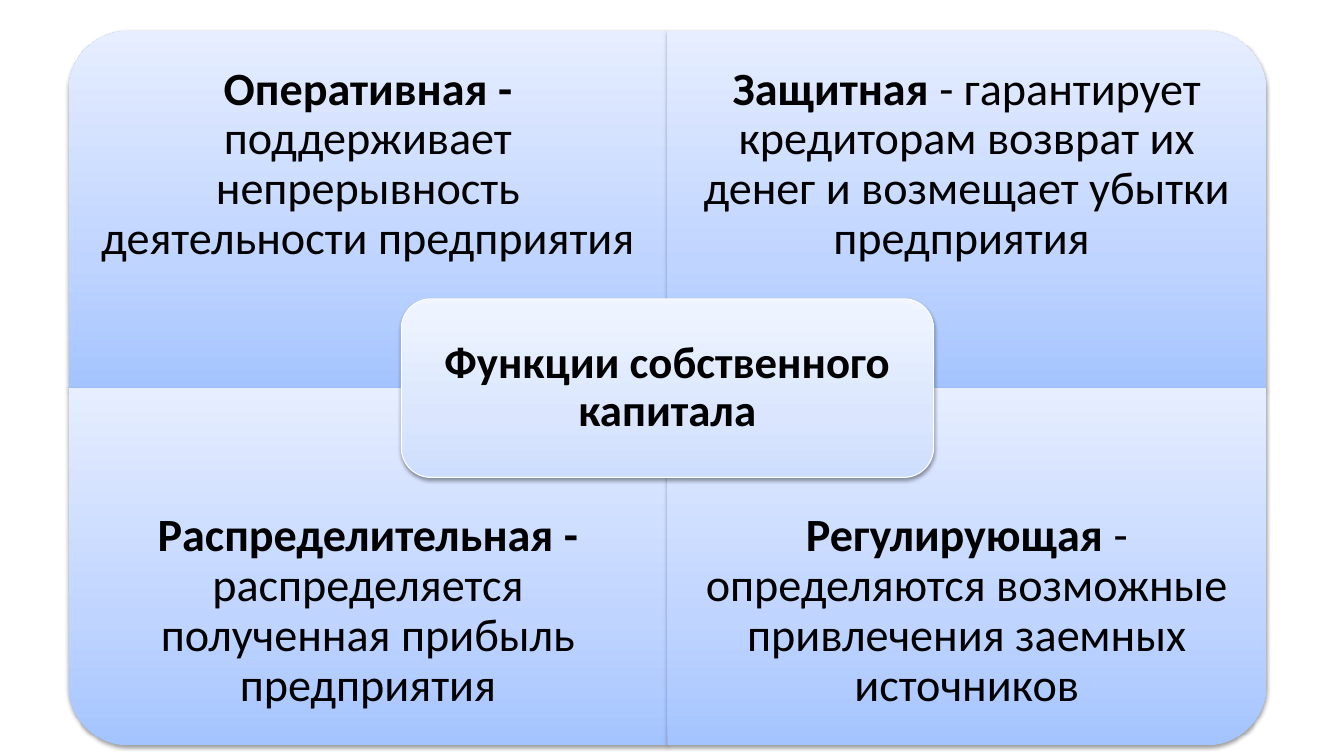
from pptx import Presentation
from pptx.dml.color import RGBColor
from pptx.enum.shapes import MSO_SHAPE
from pptx.enum.text import MSO_ANCHOR, PP_ALIGN
from pptx.oxml import parse_xml
from pptx.oxml.ns import nsdecls
from pptx.util import Pt

QUARTER = MSO_SHAPE.ROUND_1_RECTANGLE
ROUNDED = MSO_SHAPE.ROUNDED_RECTANGLE
MIDDLE = MSO_ANCHOR.MIDDLE
CENTER = PP_ALIGN.CENTER

MID_X, MID_Y = 476.75, 277.25
QUARTER_W, QUARTER_H = 427.7, 255.15
TEXT_H = QUARTER_H * 0.75
CORE_W, CORE_H = 380.2, 127.6

QUARTER_STOPS = ("A4C4FF", "BFD4FF", "E6EEFF")
CORE_STOPS = ("CDDDFE", "DBE6FE", "F0F5FF")

# column, row, rotation, bold text, plain text
FUNCTIONS = [
    (0, 0, 270, "Оперативная - ",
     "поддерживает непрерывность деятельности предприятия"),
    (1, 0, 0, "Защитная",
     " - гарантирует кредиторам возврат их денег и возмещает убытки предприятия "),
    (0, 1, 180, "Распределительная - ",
     "распределяется полученная прибыль предприятия"),
    (1, 1, 90, "Регулирующая",
     " - определяются возможные привлечения заемных источников"),
]


def rgb(color):
    return RGBColor.from_string(color)


def set_gradient(sp, colors):
    """Fill from bottom to top, whatever the rotation of the shape."""
    stops = "".join(
        f'<a:gs pos="{pos}"><a:srgbClr val="{color}"/></a:gs>'
        for pos, color in zip((0, 35000, 100000), colors))
    sp.fill.background()
    no_fill = sp.fill._xPr.find("{*}noFill")
    no_fill.getparent().replace(no_fill, parse_xml(
        f'<a:gradFill {nsdecls("a")} rotWithShape="0"><a:gsLst>{stops}</a:gsLst>'
        '<a:lin ang="16200000" scaled="0"/></a:gradFill>'))


def add_shadow(sp):
    sp._element.spPr.append(parse_xml(
        f'<a:effectLst {nsdecls("a")}><a:outerShdw blurRad="{Pt(3.1)}" '
        f'dist="{Pt(1.6)}" dir="5400000" rotWithShape="0">'
        '<a:srgbClr val="000000"><a:alpha val="38000"/></a:srgbClr>'
        '</a:outerShdw></a:effectLst>'))


def add_panel(s, kind, center_x, center_y, w, h, colors, rotation=0, line=None):
    """Add a shape that covers w by h once it is rotated."""
    if rotation % 180:
        w, h = h, w
    sp = s.shapes.add_shape(kind, Pt(center_x - w / 2), Pt(center_y - h / 2),
                            Pt(w), Pt(h))
    sp.rotation = rotation
    set_gradient(sp, colors)
    if line:
        sp.line.color.rgb = rgb(line)
        sp.line.width = Pt(0.75)
    else:
        sp.line.fill.background()
    add_shadow(sp)
    return sp


def write_text(sp, runs, size, inset):
    tf = sp.text_frame
    tf.word_wrap = True
    tf.vertical_anchor = MIDDLE
    tf.margin_left = tf.margin_right = Pt(inset)
    tf.margin_top = tf.margin_bottom = Pt(inset)
    p = tf.paragraphs[0]
    p.alignment = CENTER
    p.line_spacing = 0.9
    for text, bold in runs:
        r = p.add_run()
        r.text = text
        r.font.name = "Calibri"
        r.font.size = Pt(size)
        r.font.bold = bold
        r.font.color.rgb = rgb("000000")


def add_function(s, col, row, rotation, name, description):
    left = MID_X + (col - 1) * QUARTER_W
    top = MID_Y + (row - 1) * QUARTER_H
    add_panel(s, QUARTER, left + QUARTER_W / 2, top + QUARTER_H / 2,
              QUARTER_W, QUARTER_H, QUARTER_STOPS, rotation)
    text_top = top + row * (QUARTER_H - TEXT_H)
    box = s.shapes.add_textbox(Pt(left), Pt(text_top), Pt(QUARTER_W), Pt(TEXT_H))
    write_text(box, [(name, True), (description, False)], 33, 18.5)


def main():
    prs = Presentation()
    prs.slide_width, prs.slide_height = Pt(960), Pt(540)
    s = prs.slides.add_slide(prs.slide_layouts[6])
    for function in FUNCTIONS:
        add_function(s, *function)
    core = add_panel(s, ROUNDED, MID_X, MID_Y, CORE_W, CORE_H, CORE_STOPS,
                     line="FFFFFF")
    write_text(core, [("Функции собственного капитала", True)], 32, 9.6)
    prs.save("out.pptx")


if __name__ == "__main__":
    main()
